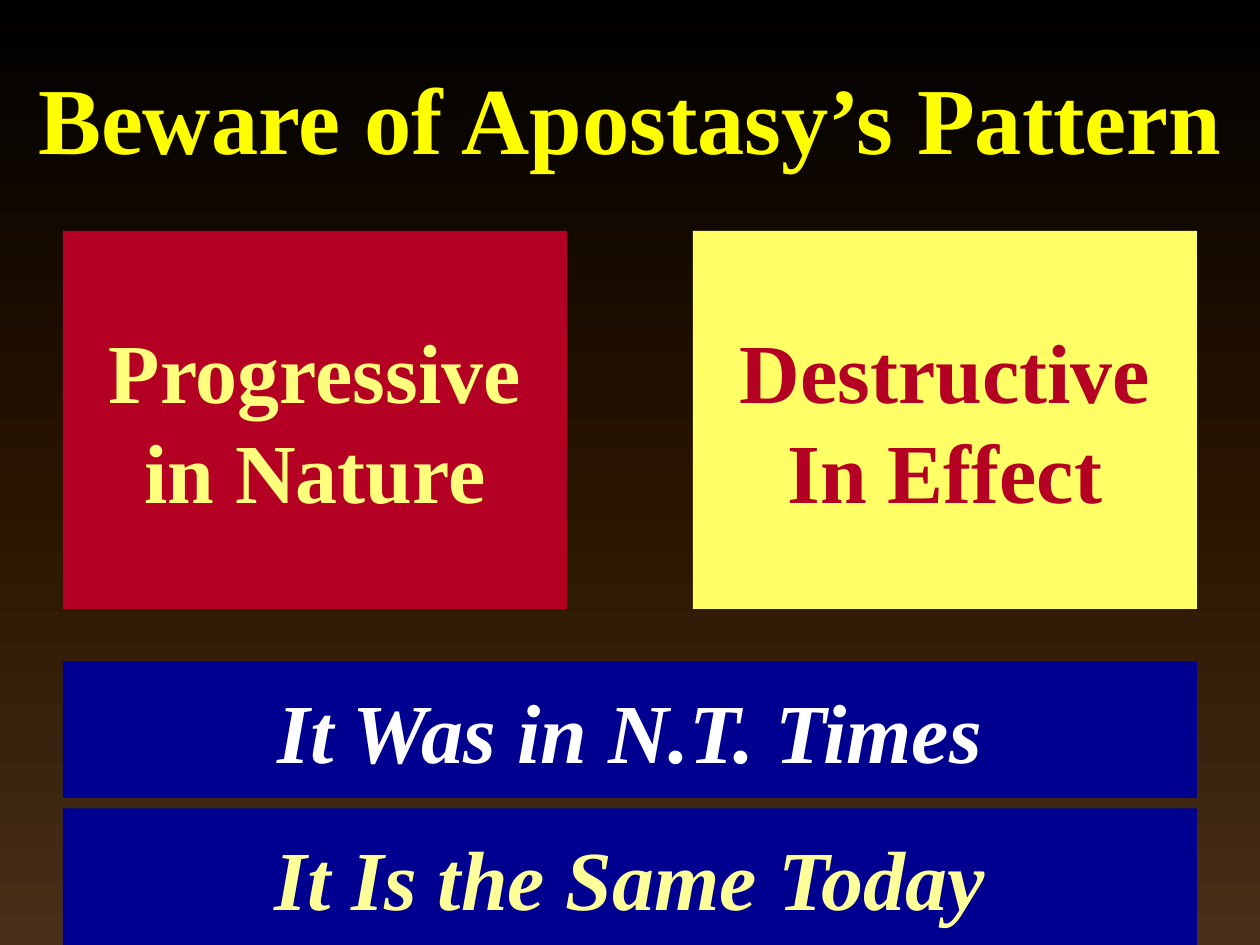
from copy import deepcopy

from lxml.etree import SubElement
from pptx import Presentation
from pptx.dml.color import RGBColor
from pptx.enum.shapes import MSO_SHAPE
from pptx.enum.text import MSO_ANCHOR, PP_ALIGN
from pptx.oxml.ns import qn
from pptx.util import Pt

FONT = "Times New Roman"
COLORS = {
    "black": "000000",
    "dark_brown": "291400",
    "brown": "472F18",
    "title": "FFFF00",
    "red": "B40022",
    "yellow": "FFFF66",
    "cream": "FFFF7D",
    "navy": "000090",
    "white": "FFFFFF",
    "pale": "FFFF99",
}


def rgb(name):
    return RGBColor.from_string(COLORS[name])


def set_background(s, stops):
    fill = s.background.fill
    fill.gradient()
    fill.gradient_angle = 270
    gs_list = s.element.find(".//" + qn("a:gsLst"))
    gs_list.insert(1, deepcopy(gs_list[0]))
    for stop, (position, color) in zip(fill.gradient_stops, stops):
        stop.color.rgb = rgb(color)
        stop.position = position


def set_text(sp, text, size, color, italic=None, wrap=True):
    tf = sp.text_frame
    tf.text = text
    tf.word_wrap = wrap
    tf.vertical_anchor = MSO_ANCHOR.MIDDLE
    for p in tf.paragraphs:
        p.alignment = PP_ALIGN.CENTER
        for r in p.runs:
            r.font.name = FONT
            r.font.size = Pt(size)
            r.font.bold = True
            r.font.italic = italic
            r.font.color.rgb = rgb(color)


def add_text_shadow(r):
    fill = r.font._element.find(qn("a:solidFill"))
    effects = SubElement(r.font._element, qn("a:effectLst"))
    fill.addnext(effects)
    shadow = SubElement(effects, qn("a:outerShdw"), dist="38100", dir="2700000")
    SubElement(shadow, qn("a:srgbClr"), val=COLORS["black"])


def add_title(s, text):
    sp = s.shapes.add_textbox(Pt(0), Pt(21.6), Pt(720), Pt(90))
    set_text(sp, text, 54, "title")
    add_text_shadow(sp.text_frame.paragraphs[0].runs[0])


def add_panel(s, left, top, width, height, fill, text, color, **style):
    sp = s.shapes.add_shape(
        MSO_SHAPE.RECTANGLE, Pt(left), Pt(top), Pt(width), Pt(height)
    )
    sp.shadow.inherit = False
    sp.fill.solid()
    sp.fill.fore_color.rgb = rgb(fill)
    sp.line.fill.background()
    set_text(sp, text, 48, color, **style)


def main():
    prs = Presentation()
    prs.slide_width, prs.slide_height = Pt(720), Pt(540)
    s = prs.slides.add_slide(prs.slide_layouts[6])
    set_background(s, [(0, "black"), (0.52, "dark_brown"), (1, "brown")])
    add_title(s, "Beware of Apostasy’s Pattern")

    cards = [
        ("Progressive\nin Nature", "red", "cream"),
        ("Destructive\nIn Effect", "yellow", "red"),
    ]
    for i, (text, fill, color) in enumerate(cards):
        add_panel(s, 36 + 360 * i, 132, 288, 216, fill, text, color, wrap=False)

    bars = [("It Was in N.T. Times", "white"), ("It Is the Same Today", "pale")]
    for i, (text, color) in enumerate(bars):
        add_panel(s, 36, 378 + 84 * i, 648, 78, "navy", text, color, italic=True)

    prs.save("out.pptx")


if __name__ == "__main__":
    main()
